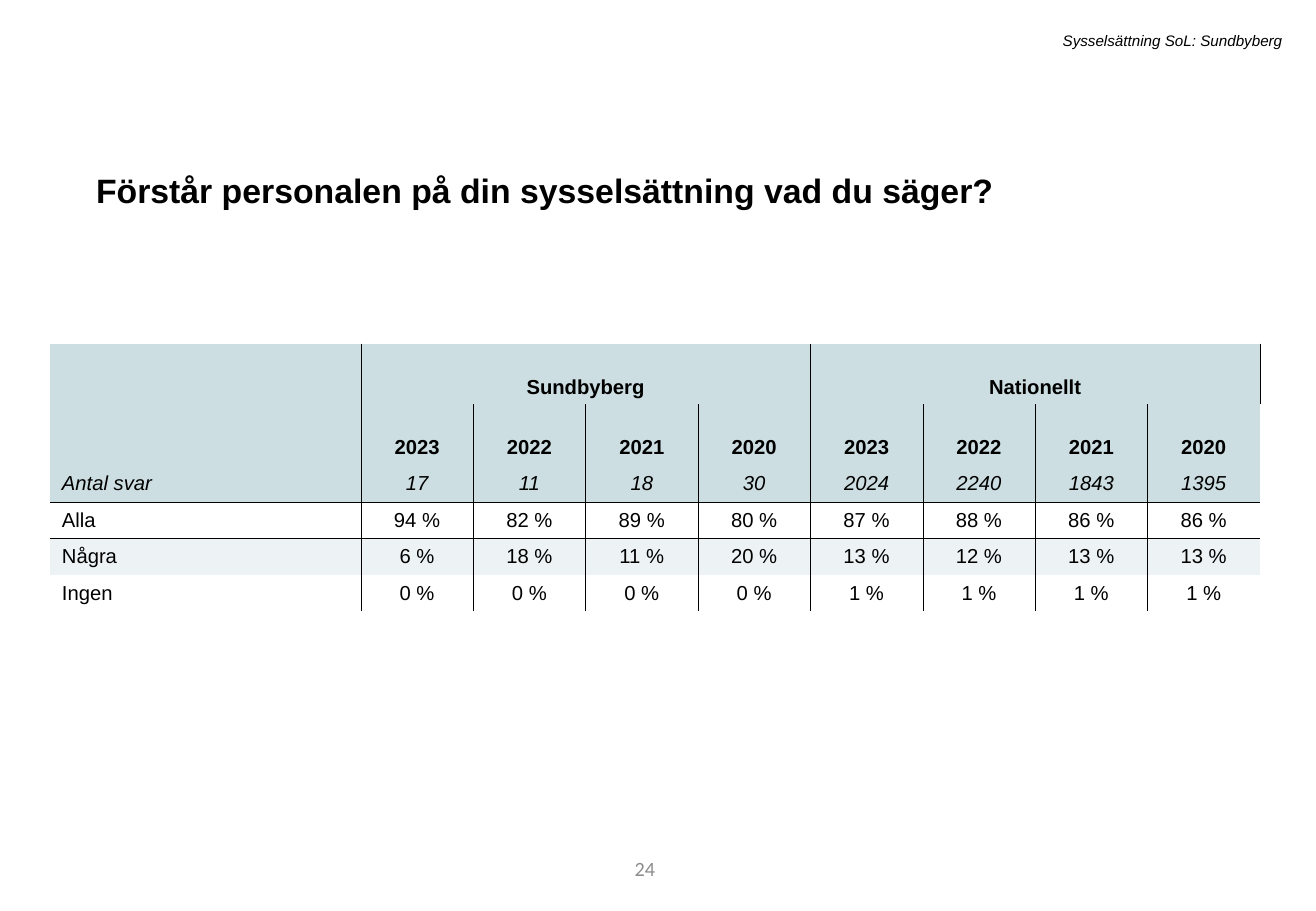
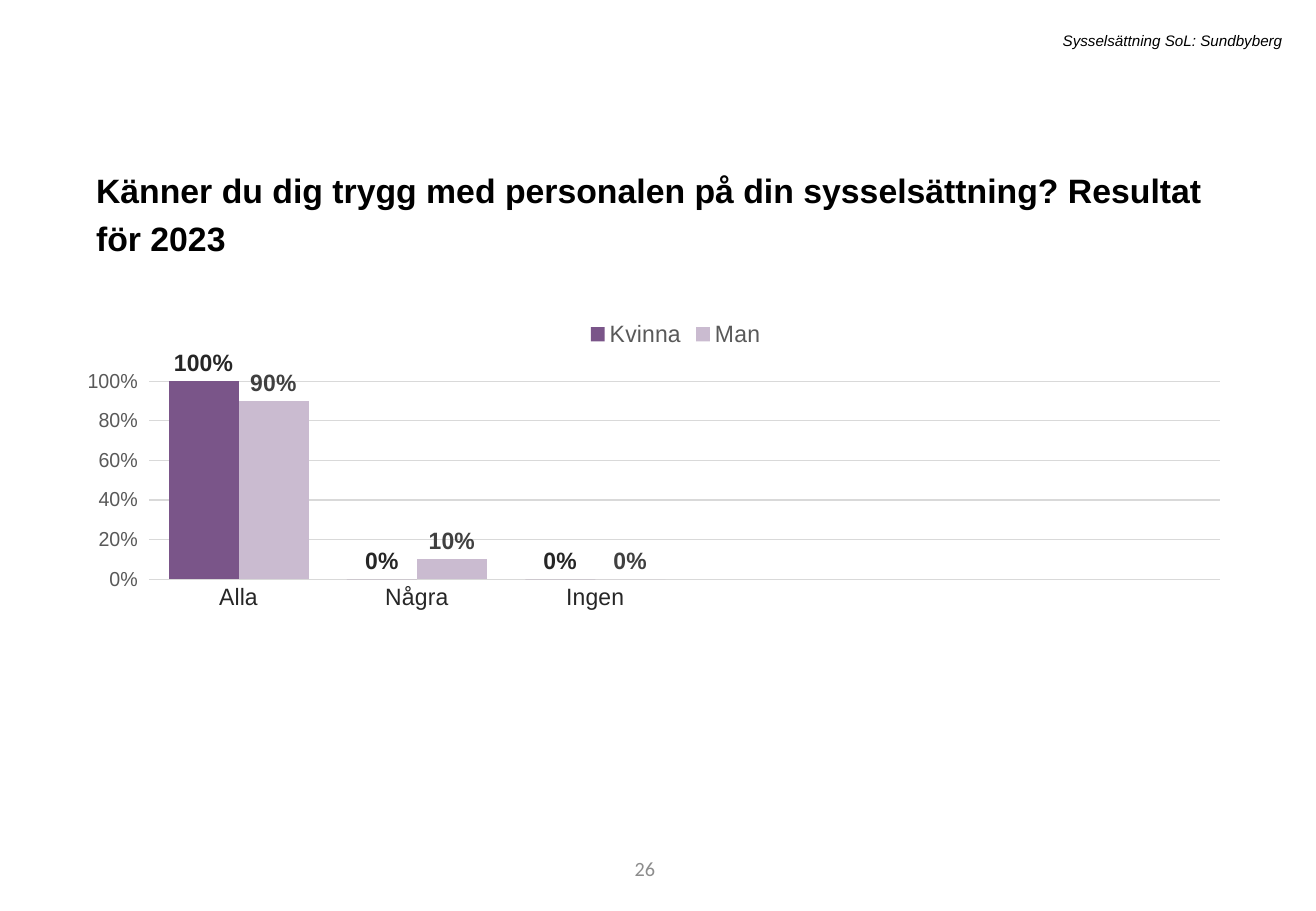
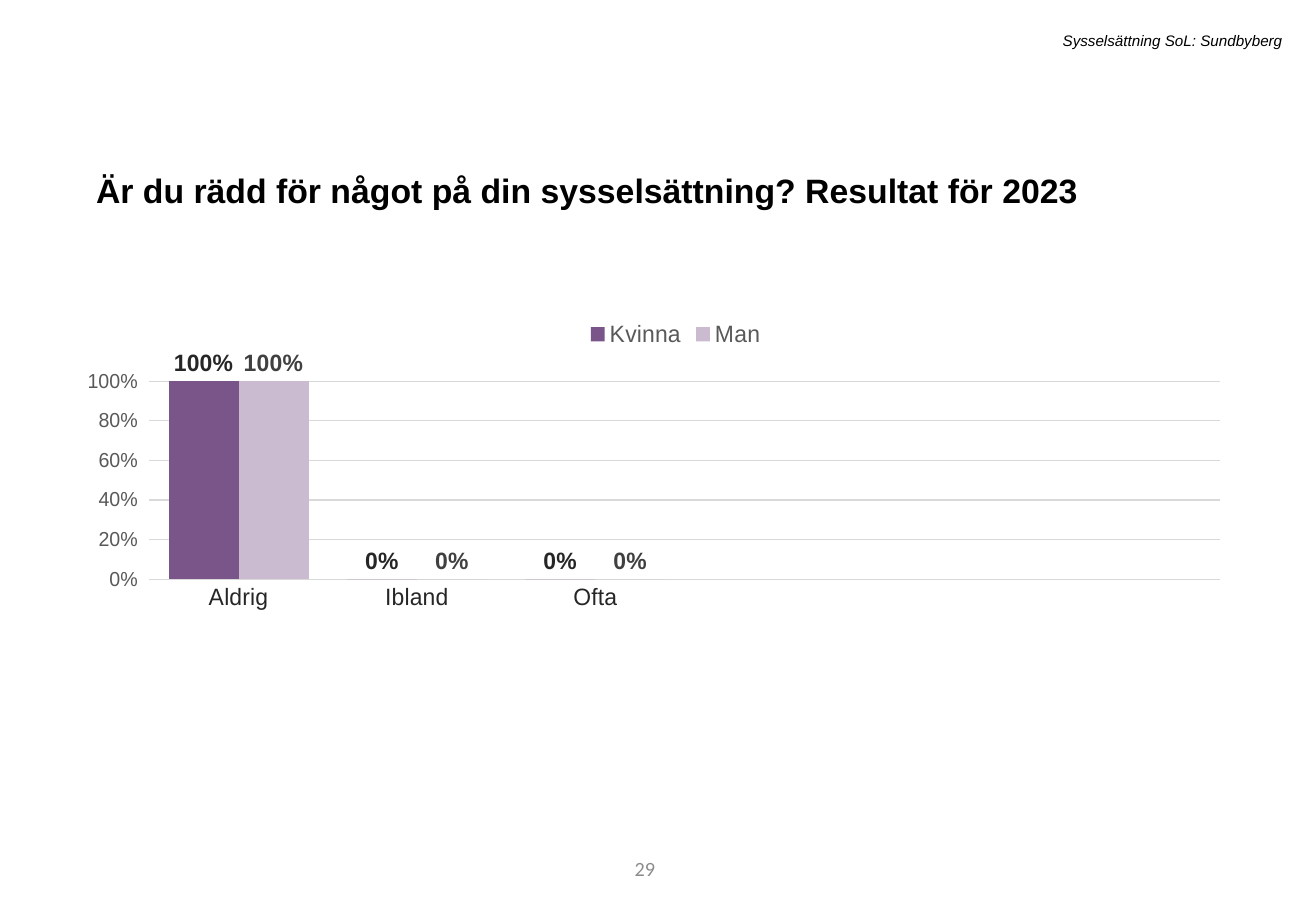
from lxml import etree
from pptx import Presentation
from pptx import util as u
from pptx.chart import data
from pptx.dml import color
from pptx.enum import chart as ec
from pptx.enum import text as et
from pptx.oxml import ns, parse_xml

HEX = {
    "black": "000000", "page": "8C8C8C", "head": "CCDEE1", "band": "EDF3F4",
    "dark": "7A5589", "light": "CABBD0", "grid": "D9D9D9",
    "axis": "595959", "deep": "262626", "mid": "404040",
}
FACE = "Arial"
LEFT, MID, RIGHT = et.PP_ALIGN.LEFT, et.PP_ALIGN.CENTER, et.PP_ALIGN.RIGHT

# Boxes: left, top, width, height
TAG_BOX = (1.79, 0.21, 8.86, 0.25)
TITLE_BOX = (0.69, 1.28, 9.4, 0.47)
PAGE_BOX = (3.05, 6.95, 2.44, 0.4)
TABLE_BOX = (0.41, 2.83, 10, 2.2)
CHART_BOX = (0.72, 2.53, 9.4, 3.95)
PLOT = {"x": 0.025, "y": 0.154, "w": 0.966, "h": 0.413}

COUNTS = ["Antal svar", "17", "11", "18", "30", "2024", "2240", "1843", "1395"]
SHARES = [
    ("Alla", 94, 82, 89, 80, 87, 88, 86, 86),
    ("Några", 6, 18, 11, 20, 13, 12, 13, 13),
    ("Ingen", 0, 0, 0, 0, 1, 1, 1, 1),
]


def rgb(name):
    return color.RGBColor.from_string(HEX[name])


def inches(box):
    return [u.Inches(n) for n in box]


def style(font, size, hue="black", bold=False, italic=False, face=FACE):
    font.name, font.size = face, u.Pt(size)
    font.bold, font.italic = bold, italic
    font.color.rgb = rgb(hue)


def write(frame, words, align=LEFT, **look):
    """Put one formatted paragraph in a text frame and return it."""
    par = frame.paragraphs[0]
    par.alignment = align
    run = par.add_run()
    run.text = words
    style(run.font, **look)
    return par


def add_box(slide, box, words, anchor=et.MSO_ANCHOR.TOP, **look):
    frame = slide.shapes.add_textbox(*inches(box)).text_frame
    frame.word_wrap = True
    frame.vertical_anchor = anchor
    write(frame, words, **look)


# Parts that every slide has
def add_base(deck, title, page):
    slide = deck.slides.add_slide(deck.slide_layouts[5])
    head = slide.shapes.title
    head.left, head.top, head.width, head.height = inches(TITLE_BOX)
    frame = head.text_frame
    frame.word_wrap = True
    frame.auto_size = et.MSO_AUTO_SIZE.SHAPE_TO_FIT_TEXT
    frame.vertical_anchor = et.MSO_ANCHOR.TOP
    par = write(frame, title, size=20, bold=True)
    par.line_spacing, par.space_before = 1.2, u.Pt(10)
    add_box(slide, TAG_BOX, "Sysselsättning SoL: Sundbyberg",
            align=RIGHT, size=9, italic=True)
    add_box(slide, PAGE_BOX, str(page), anchor=et.MSO_ANCHOR.MIDDLE,
            align=RIGHT, size=12, hue="page", face="Calibri")
    return slide


# Table
def add_rules(cell, sides):
    props = cell._tc.get_or_add_tcPr()
    for side in "LRTB":
        if side in sides:
            line = etree.SubElement(props, ns.qn("a:ln" + side), w="3175")
            fill = etree.SubElement(line, ns.qn("a:solidFill"))
            etree.SubElement(fill, ns.qn("a:srgbClr"), val=HEX["black"])


def add_grid(slide, box):
    years = ["2023", "2022", "2021", "2020"]
    rows = [
        ["", "Sundbyberg", "", "", "", "Nationellt", "", "", ""],
        [""] + years * 2,
        COUNTS,
    ] + [[row[0]] + [f"{n} %" for n in row[1:]] for row in SHARES]
    last = len(COUNTS) - 1
    table = slide.shapes.add_table(len(rows), last + 1, *inches(box)).table
    # Plain table style, without lines or fills
    table._tbl.tblPr.find(ns.qn("a:tableStyleId")).text = (
        "{2D5ABB26-0587-4C30-8999-92F81FD0307C}")
    table.first_row = table.horz_banding = False
    for c, col in enumerate(table.columns):
        col.width = u.Inches(0.925 if c else 2.56)
    for r, row in enumerate(table.rows):
        row.height = u.Inches(0.5 if r < 2 else 0.3)
    for start in (1, 5):
        table.cell(0, start).merge(table.cell(0, start + 3))

    for r, row in enumerate(rows):
        for c, words in enumerate(row):
            cell = table.cell(r, c)
            if not cell.is_spanned:
                sides = "L" if c else ""
                sides += "R" if c < last else ""
                sides += {2: "B", 3: "T"}.get(r, "")
                add_rules(cell, sides)
            if r < 3 or r == 4:
                cell.fill.solid()
                cell.fill.fore_color.rgb = rgb("head" if r < 3 else "band")
            else:
                cell.fill.background()
            cell.vertical_anchor = (
                et.MSO_ANCHOR.BOTTOM if r < 2 else et.MSO_ANCHOR.MIDDLE)
            if words:
                write(cell.text_frame, words, align=MID if c else LEFT,
                      size=12, bold=r < 2, italic=r == 2)


# Chart
def set_plot(chart):
    area = chart._chartSpace.chart.plotArea
    for old in area.findall(ns.qn("c:layout")):
        area.remove(old)
    modes = "".join(f'<c:{k}Mode val="edge"/>' for k in "xy")
    sizes = "".join(f'<c:{k} val="{v}"/>' for k, v in PLOT.items())
    area.insert(0, parse_xml(
        f'<c:layout {ns.nsdecls("c")}><c:manualLayout>'
        f'<c:layoutTarget val="inner"/>{modes}{sizes}'
        '</c:manualLayout></c:layout>'))


def set_line(line):
    line.color.rgb, line.width = rgb("grid"), u.Pt(0.75)


def add_bars(slide, box, names, women, men):
    source = data.CategoryChartData(number_format="0%")
    source.categories = names + [""] * 3
    for name, vals in (("Kvinna", women), ("Man", men)):
        source.add_series(name, vals + [None] * 3)
    chart = slide.shapes.add_chart(
        ec.XL_CHART_TYPE.COLUMN_CLUSTERED, *inches(box), source).chart
    style(chart.font, 10)
    chart.has_title = False
    set_plot(chart)

    chart.has_legend = True
    chart.legend.position = ec.XL_LEGEND_POSITION.TOP
    chart.legend.include_in_layout = False
    style(chart.legend.font, 14, "axis")

    base, scale = chart.category_axis, chart.value_axis
    base.major_tick_mark = ec.XL_TICK_MARK.NONE
    style(base.tick_labels.font, 14, "deep")
    set_line(base.format.line)
    scale.minimum_scale, scale.maximum_scale, scale.major_unit = 0, 1, 0.2
    scale.major_tick_mark = ec.XL_TICK_MARK.OUTSIDE
    scale.tick_labels.number_format = "0%"
    scale.tick_labels.number_format_is_linked = False
    style(scale.tick_labels.font, 12, "axis")
    scale.format.line.fill.background()
    set_line(scale.major_gridlines.format.line)

    plot = chart.plots[0]
    plot.gap_width, plot.overlap, plot.vary_by_categories = 55, 0, False
    for bars, hue, ink in zip(plot.series, ("dark", "light"), ("deep", "mid")):
        bars.format.fill.solid()
        bars.format.fill.fore_color.rgb = rgb(hue)
        tags = bars.data_labels
        tags.show_value = True
        tags.number_format, tags.number_format_is_linked = "0%", False
        tags.position = ec.XL_LABEL_POSITION.OUTSIDE_END
        style(tags.font, 14, ink, bold=True)


def main():
    deck = Presentation()
    deck.slide_width, deck.slide_height = u.Inches(10.83), u.Inches(7.5)

    slide = add_base(
        deck, "Förstår personalen på din sysselsättning vad du säger?", 24)
    add_grid(slide, TABLE_BOX)

    slide = add_base(
        deck, "Känner du dig trygg med personalen på din sysselsättning? "
        "Resultat för 2023", 26)
    add_bars(slide, CHART_BOX, ["Alla", "Några", "Ingen"],
             [1, 0, 0], [0.9, 0.1, 0])

    slide = add_base(
        deck, "Är du rädd för något på din sysselsättning? "
        "Resultat för 2023", 29)
    add_bars(slide, CHART_BOX, ["Aldrig", "Ibland", "Ofta"],
             [1, 0, 0], [1, 0, 0])

    deck.save("out.pptx")


if __name__ == "__main__":
    main()
